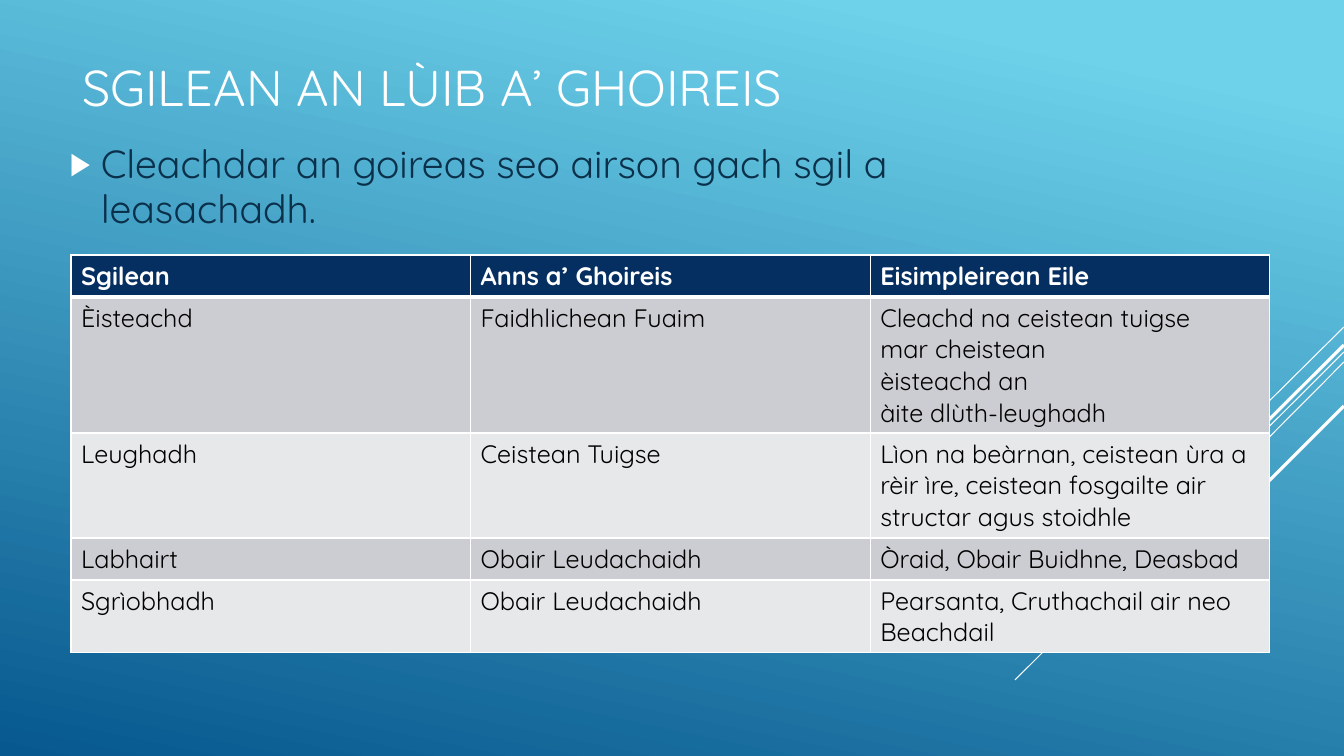
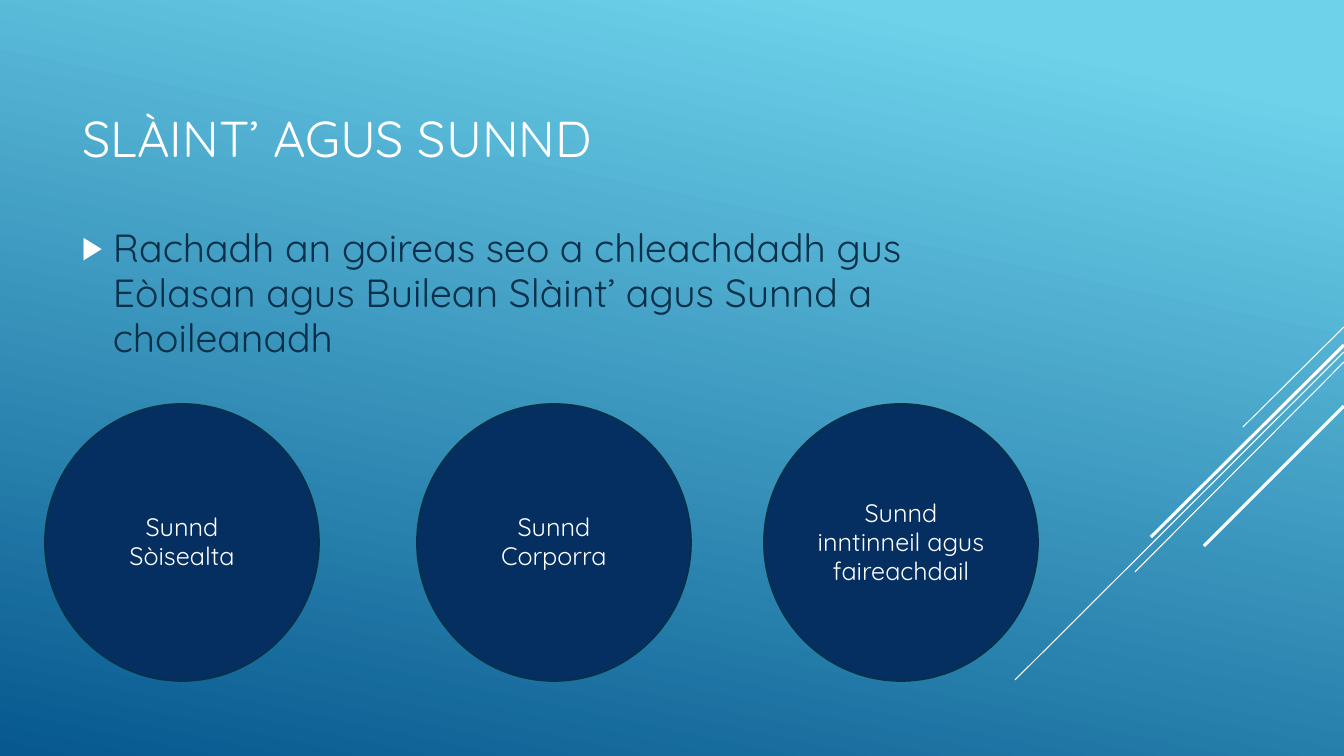
from lxml import etree
from pptx import Presentation
from pptx.dml.color import RGBColor
from pptx.enum.shapes import MSO_CONNECTOR, MSO_SHAPE
from pptx.enum.text import MSO_ANCHOR, PP_ALIGN
from pptx.oxml.ns import qn
from pptx.util import Pt

STRAIGHT = MSO_CONNECTOR.STRAIGHT
ELLIPSE = MSO_SHAPE.OVAL
MIDDLE = MSO_ANCHOR.MIDDLE
LEFT, CENTER = PP_ALIGN.LEFT, PP_ALIGN.CENTER

EMU_PER_INCH, PX_PER_INCH = 914400, 100.8
SLIDE_WIDTH, SLIDE_HEIGHT = 1344, 756
TITLE_ONLY = 5
FONT = "Quicksand"
WHITE, BLACK, NAVY, INK = "FFFFFF", "000000", "052F61", "0A304A"
CIRCLE_EDGE = "043148"
BAND_COLOURS = ("CCCDD2", "E7E8EA")
GRADIENT = ((0.1, "6ED2EB"), (1.0, "06588E"))
LINE_SPACING = 0.96

# start x, start y, end x, end y, width in points
DIAGONALS = (
    (1344, 327, 1243, 427, 0.75),
    (1344, 352, 1015, 680, 0.75),
    (1344, 362, 1135, 572, 0.75),
    (1344, 345, 1151, 537, 2.25),
    (1344, 406, 1204, 546, 2.25),
)

SKILLS = (
    ("Sgilean", "Anns a’ Ghoireis", "Eisimpleirean Eile"),
    ("Èisteachd", "Faidhlichean Fuaim",
     "Cleachd na ceistean tuigse\nmar cheistean\nèisteachd an\nàite dlùth-leughadh"),
    ("Leughadh", "Ceistean Tuigse",
     "Lìon na beàrnan, ceistean ùra a rèir ìre, ceistean fosgailte air structar agus stoidhle"),
    ("Labhairt", "Obair Leudachaidh", "Òraid, Obair Buidhne, Deasbad"),
    ("Sgrìobhadh", "Obair Leudachaidh", "Pearsanta, Cruthachail air neo Beachdail"),
)
SKILL_ROW_HEIGHTS = (42, 136, 105, 42, 73)

WELLBEING = ((45, "Sunnd Sòisealta"), (417, "Sunnd Corporra"),
             (764, "Sunnd inntinneil agus faireachdail"))


def px(length):
    return round(length * EMU_PER_INCH / PX_PER_INCH)


def emu_box(box):
    return [px(length) for length in box]


def colour(hex_string):
    return RGBColor.from_string(hex_string)


def style_text(text_frame, size, hex_string, bold=False, align=LEFT):
    for paragraph in text_frame.paragraphs:
        paragraph.alignment = align
        font = paragraph.font
        font.name, font.size, font.bold = FONT, Pt(size), bold
        font.color.rgb = colour(hex_string)


def add_element(parent, tag, **attributes):
    return etree.SubElement(parent, qn(tag), attributes)


def set_background(master):
    fill = master.background.fill
    fill.gradient()
    fill.gradient_angle = 258
    for stop, (position, hex_string) in zip(fill.gradient_stops, GRADIENT):
        stop.position = position
        stop.color.rgb = colour(hex_string)


def add_diagonals(slide, layout):
    """Draw the diagonal lines and move them to the layout, for every slide to share."""
    for number, (*ends, width) in enumerate(DIAGONALS, start=101):
        line = slide.shapes.add_connector(STRAIGHT, *emu_box(ends))
        line.line.color.rgb = colour(WHITE)
        line.line.width = Pt(width)
        add_element(line.element.spPr, "a:effectLst")
        line.element.xpath(".//p:cNvPr")[0].set("id", str(number))
        layout.shapes.element.append(line.element)


def set_title(slide, text, box):
    title = slide.shapes.title
    title.left, title.top, title.width, title.height = emu_box(box)
    title.text_frame.text = text
    title.text_frame.vertical_anchor = MIDDLE
    style_text(title.text_frame, 36, WHITE)


def add_bullet_text(slide, text, box):
    text_frame = slide.shapes.add_textbox(*emu_box(box)).text_frame
    text_frame.word_wrap = True
    text_frame.text = text
    style_text(text_frame, 28, INK)
    paragraph = text_frame.paragraphs[0]
    paragraph.line_spacing = LINE_SPACING
    properties = paragraph._p.get_or_add_pPr()
    properties.set("marL", str(px(31)))
    properties.set("indent", str(px(-31)))
    default_font = properties.find(qn("a:defRPr"))
    bullet_colour = add_element(properties, "a:buClr")
    add_element(bullet_colour, "a:srgbClr", val=WHITE)
    add_element(properties, "a:buSzPct", val="80000")
    add_element(properties, "a:buFont", typeface="Arial")
    add_element(properties, "a:buChar", char="▶")
    if default_font is not None:
        properties.append(default_font)


def set_borders(cell, **widths):
    """Give the cell white borders of 1 pt, save those sides given in widths."""
    properties = cell._tc.get_or_add_tcPr()
    for position, side in enumerate("LRTB"):
        width = Pt(widths.get(side, 1))
        border = etree.Element(qn("a:ln" + side), w=str(width))
        add_element(add_element(border, "a:solidFill"), "a:srgbClr", val=WHITE)
        properties.insert(position, border)


def add_skills_table(slide, left, top, width):
    columns = len(SKILLS[0])
    box = (left, top, width, sum(SKILL_ROW_HEIGHTS))
    table = slide.shapes.add_table(len(SKILLS), columns, *emu_box(box)).table
    for column in table.columns:
        column.width = px(width / columns)
    for row_index, texts in enumerate(SKILLS):
        table.rows[row_index].height = px(SKILL_ROW_HEIGHTS[row_index])
        is_header = row_index == 0
        fill_colour = NAVY if is_header else BAND_COLOURS[(row_index - 1) % 2]
        for column_index, text in enumerate(texts):
            cell = table.cell(row_index, column_index)
            cell.text = text
            cell.fill.solid()
            cell.fill.fore_color.rgb = colour(fill_colour)
            style_text(cell.text_frame, 18, WHITE if is_header else BLACK, bold=is_header)
            set_borders(cell, B=3 if is_header else 1, T=3 if row_index == 1 else 1)


def add_circle(slide, text, box):
    circle = slide.shapes.add_shape(ELLIPSE, *emu_box(box))
    circle.shadow.inherit = False
    circle.fill.solid()
    circle.fill.fore_color.rgb = colour(NAVY)
    circle.line.color.rgb = colour(CIRCLE_EDGE)
    circle.line.width = Pt(1.25)
    text_frame = circle.text_frame
    text_frame.word_wrap = True
    text_frame.vertical_anchor = MIDDLE
    text_frame.text = text
    style_text(text_frame, 18, WHITE, align=CENTER)
    text_frame.paragraphs[0].line_spacing = LINE_SPACING


def fill_skills_slide(slide):
    set_title(slide, "SGILEAN AN LÙIB A’ GHOIREIS", (72, 3, 940, 166))
    add_bullet_text(slide, "Cleachdar an goireas seo airson gach sgil a leasachadh.",
                    (60, 137, 940, 398))
    add_skills_table(slide, 71, 255, 1199)


def fill_wellbeing_slide(slide):
    set_title(slide, "SLÀINT’ AGUS SUNND", (72, 54, 940, 166))
    add_bullet_text(slide, "Rachadh an goireas seo a chleachdadh gus Eòlasan agus Builean "
                    "Slàint’ agus Sunnd a choileanadh", (72, 221, 940, 398))
    for left, text in WELLBEING:
        add_circle(slide, text, (left, 404, 274, 277))


def main():
    presentation = Presentation()
    presentation.slide_width = px(SLIDE_WIDTH)
    presentation.slide_height = px(SLIDE_HEIGHT)
    set_background(presentation.slide_master)
    layout = presentation.slide_layouts[TITLE_ONLY]
    skills_slide, wellbeing_slide = (presentation.slides.add_slide(layout) for _ in range(2))
    add_diagonals(skills_slide, layout)
    fill_skills_slide(skills_slide)
    fill_wellbeing_slide(wellbeing_slide)
    presentation.save("out.pptx")


if __name__ == "__main__":
    main()
